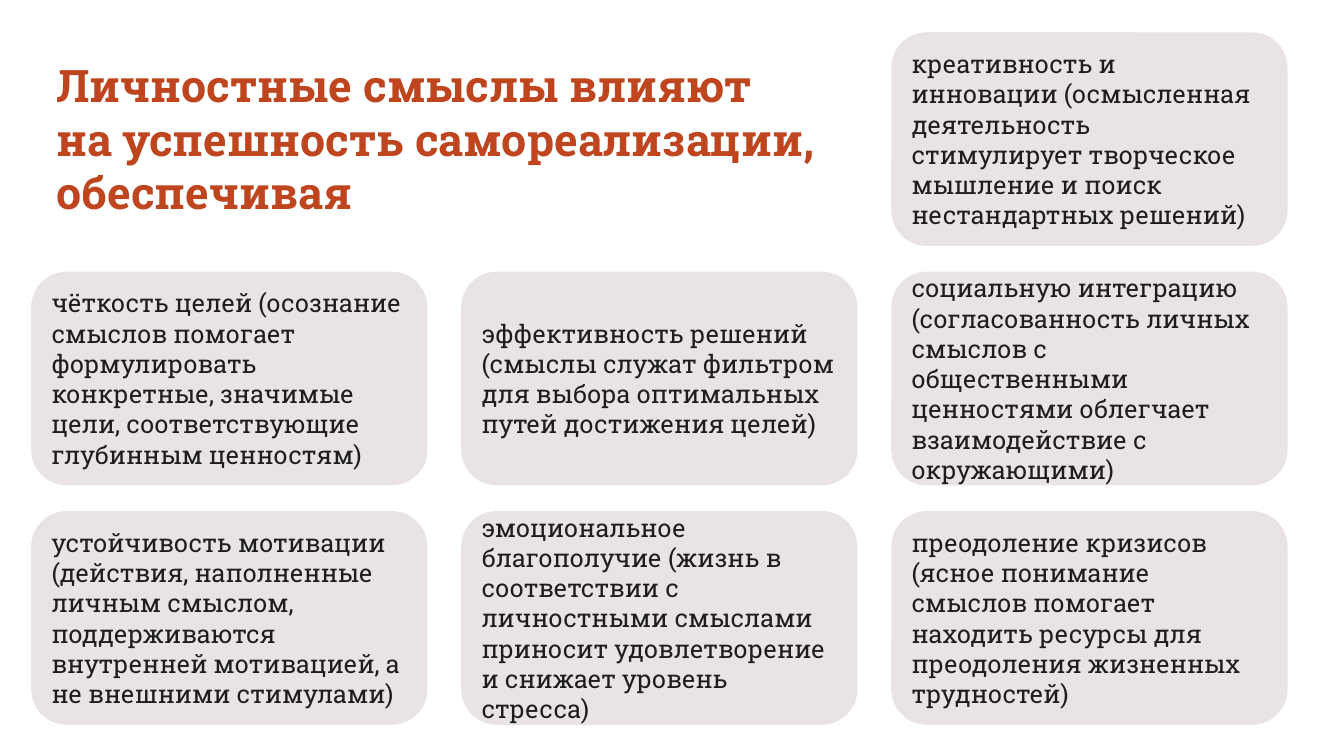
"""Build the slide on how personal meanings support self-realisation."""
from dataclasses import dataclass

from lxml.etree import SubElement
from pptx import Presentation
from pptx.dml.color import RGBColor as RGB
from pptx.enum.shapes import MSO_SHAPE as SHAPE
from pptx.enum.text import MSO_ANCHOR as ANCHOR, MSO_AUTO_SIZE as AUTO, PP_ALIGN as ALIGN
from pptx.oxml.ns import qn
from pptx.util import Inches, Pt


@dataclass(frozen=True)
class Theme:
    font: str = "Roboto Slab"
    title: str = "BF451F"
    text: str = "1D1D1D"
    card: str = "9C8380"
    card_opacity: int = 22
    title_size: int = 32
    text_size: int = 18


THEME = Theme()
LEFT, TOP = 0.31, 0.32
CARD_W, CARD_H = 3.93, 2.12
STEP_X, STEP_Y = 4.265, 2.375

CARDS = {
    (0, 1): "чёткость целей (осознание смыслов помогает формулировать конкретные, "
            "значимые цели, соответствующие глубинным ценностям)",
    (0, 2): "устойчивость мотивации (действия, наполненные личным смыслом, "
            "поддерживаются внутренней мотивацией, а не внешними стимулами)",
    (1, 1): "эффективность решений (смыслы служат фильтром для выбора "
            "оптимальных путей достижения целей)",
    (1, 2): "эмоциональное благополучие (жизнь в соответствии с личностными "
            "смыслами приносит удовлетворение и снижает уровень стресса)",
    (2, 0): "креативность и инновации (осмысленная деятельность стимулирует "
            "творческое мышление и поиск нестандартных решений)",
    (2, 1): "социальную интеграцию (согласованность личных смыслов с "
            "общественными ценностями облегчает взаимодействие с окружающими)",
    (2, 2): "преодоление кризисов (ясное понимание смыслов помогает находить "
            "ресурсы для преодоления жизненных трудностей)",
}


def write(sp, *lines, size=THEME.text_size, color=THEME.text, bold=False, anchor=ANCHOR.MIDDLE):
    tf = sp.text_frame
    tf.text = "\n".join(lines)
    tf.word_wrap = True
    tf.auto_size = AUTO.NONE
    tf.vertical_anchor = anchor
    for p in tf.paragraphs:
        p.alignment = ALIGN.LEFT
        for r in p.runs:
            r.font.name = THEME.font
            r.font.size = Pt(size)
            r.font.bold = bold
            r.font.color.rgb = RGB.from_string(color)


prs = Presentation()
prs.slide_width, prs.slide_height = Inches(13.33), Inches(7.5)
s = prs.slides.add_slide(prs.slide_layouts[5])

title = s.shapes.title
title.left, title.top = Inches(0.46), Inches(0.52)
title.width, title.height = Inches(9.08), Inches(1.72)
write(title, "Личностные смыслы влияют", "на успешность самореализации, обеспечивая",
      size=THEME.title_size, color=THEME.title, bold=True, anchor=ANCHOR.TOP)

for (col, row), text in CARDS.items():
    sp = s.shapes.add_shape(SHAPE.ROUNDED_RECTANGLE,
                            Inches(LEFT + col * STEP_X), Inches(TOP + row * STEP_Y),
                            Inches(CARD_W), Inches(CARD_H))
    sp.shadow.inherit = False
    sp.line.fill.background()
    sp.fill.solid()
    sp.fill.fore_color.rgb = RGB.from_string(THEME.card)
    tint = sp.fill._xPr.find(qn("a:solidFill"))[0]
    SubElement(tint, qn("a:alpha"), val=str(THEME.card_opacity * 1000))
    write(sp, text)

prs.save("out.pptx")
